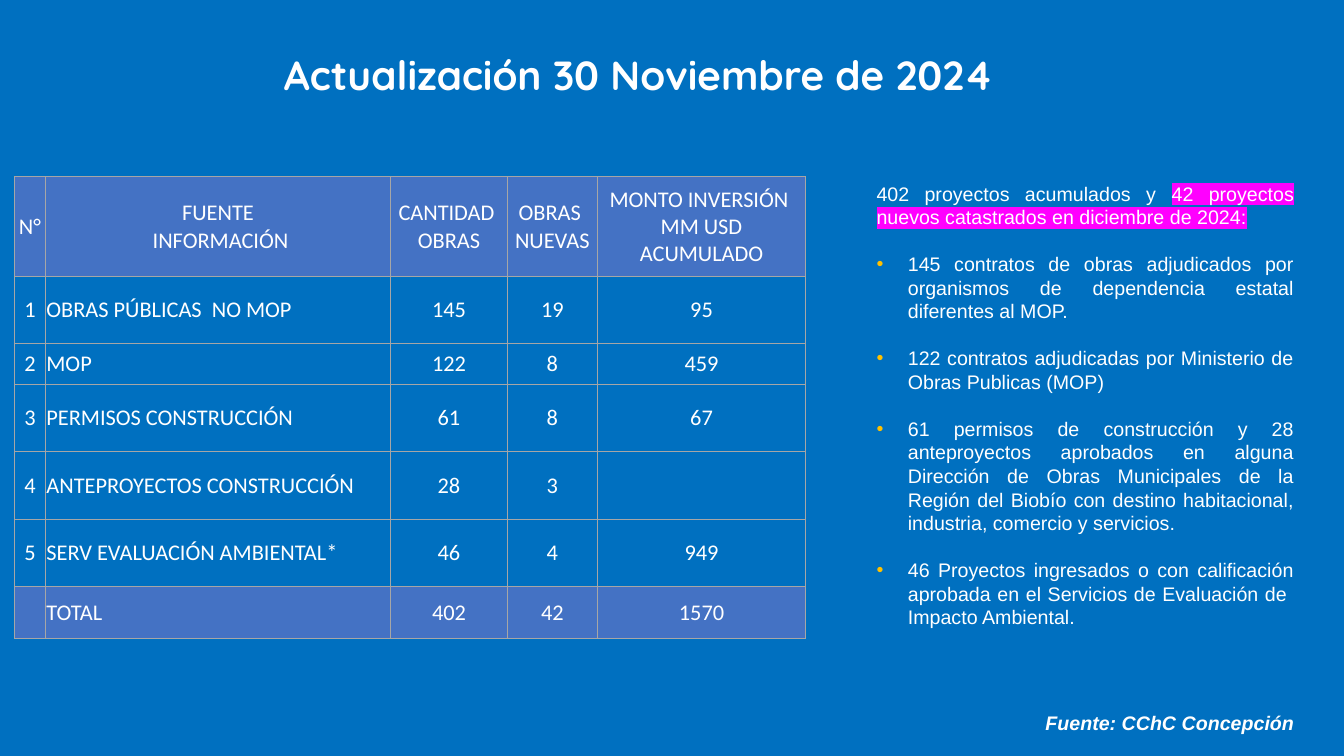
from pptx import Presentation
from pptx.dml.color import RGBColor
from pptx.enum.text import MSO_ANCHOR, PP_ALIGN
from pptx.oxml.xmlchemy import OxmlElement
from pptx.util import Cm, Pt

BLUE = RGBColor(0x00, 0x70, 0xC0)
INDIGO = RGBColor(0x44, 0x72, 0xC4)
WHITE = RGBColor(0xFF, 0xFF, 0xFF)
PINK = RGBColor(0xFF, 0x00, 0xFF)
AMBER = RGBColor(0xFF, 0xC0, 0x00)
GREY = RGBColor(0xA6, 0xA6, 0xA6)

COLS = [0.79, 8.69, 2.95, 2.26, 5.26]
HEIGHTS = [2.51, 1.7, 1.02, 1.7, 1.7, 1.7, 1.32]
ROWS = [
    ("N°", "FUENTE\n INFORMACIÓN", "CANTIDAD \nOBRAS", "OBRAS \nNUEVAS",
     "MONTO INVERSIÓN \nMM USD\nACUMULADO"),
    ("1", "OBRAS PÚBLICAS  NO MOP", "145", "19", "95"),
    ("2", "MOP", "122", "8", "459"),
    ("3", "PERMISOS CONSTRUCCIÓN", "61", "8", "67"),
    ("4", "ANTEPROYECTOS CONSTRUCCIÓN", "28", "3", ""),
    ("5", "SERV EVALUACIÓN AMBIENTAL*", "46", "4", "949"),
    ("", "TOTAL", "402", "42", "1570"),
]
POINTS = [
    "145 contratos de obras adjudicados por organismos de dependencia estatal "
    "diferentes al MOP.",
    "122 contratos adjudicadas por Ministerio de Obras Publicas (MOP)",
    "61 permisos de construcción y 28 anteproyectos aprobados en alguna "
    "Dirección de Obras Municipales de la Región del Biobío con destino "
    "habitacional, industria, comercio y servicios.",
    "46 Proyectos ingresados o con calificación aprobada en el Servicios de "
    "Evaluación de  Impacto Ambiental.",
]


def add_node(parent, tag, **attrs):
    node = OxmlElement(tag)
    for key, value in attrs.items():
        node.set(key, str(value))
    parent.append(node)
    return node


def add_run(para, text, size, face, bold=False, italic=False):
    run = para.add_run()
    run.text = text
    font = run.font
    font.size, font.name = Pt(size), face
    font.bold, font.italic = bold, italic
    font.color.rgb = WHITE
    return run


def mark(run, color):
    """Highlight a run; the element must follow the text fill."""
    props = run.font._element
    light = add_node(props, "a:highlight")
    add_node(light, "a:srgbClr", val=color)
    props.find(light.tag.replace("highlight", "solidFill")).addnext(light)


def add_bullet(para):
    props = para._p.get_or_add_pPr()
    props.set("marL", str(Cm(0.79)))
    props.set("indent", str(-Cm(0.79)))
    add_node(add_node(props, "a:buClr"), "a:srgbClr", val=AMBER)
    add_node(props, "a:buFont", typeface="Arial")
    add_node(props, "a:buChar", char="•")


def add_frame(slide, box):
    frame = slide.shapes.add_textbox(*map(Cm, box)).text_frame
    frame.word_wrap = True
    return frame


def add_title(slide, box):
    title = slide.shapes.title
    title.left, title.top, title.width, title.height = map(Cm, box)
    frame = title.text_frame
    frame.vertical_anchor = MSO_ANCHOR.MIDDLE
    para = frame.paragraphs[0]
    para.alignment = PP_ALIGN.CENTER
    add_run(para, "Actualización 30 Noviembre de 2024", 29, "Quicksand", bold=True)


def add_notes(slide, box):
    frame = add_frame(slide, box)
    intro = frame.paragraphs[0]
    intro.alignment = PP_ALIGN.JUSTIFY
    add_run(intro, "402 proyectos acumulados y ", 14, "Arial")
    fresh = "42 proyectos nuevos catastrados en diciembre de 2024:"
    mark(add_run(intro, fresh, 14, "Arial"), PINK)
    for point in POINTS:
        para = frame.add_paragraph()
        para.alignment = PP_ALIGN.JUSTIFY
        para.space_before = Pt(16.8)
        add_bullet(para)
        add_run(para, point, 14, "Arial")


def add_source(slide, box):
    para = add_frame(slide, box).paragraphs[0]
    para.alignment = PP_ALIGN.RIGHT
    add_run(para, "Fuente: CChC Concepción", 14, "Arial", bold=True, italic=True)


def fill_cell(cell, text, align, shaded):
    cell.margin_left = cell.margin_right = cell.margin_top = Cm(0.02)
    cell.margin_bottom = 0
    cell.vertical_anchor = MSO_ANCHOR.MIDDLE
    props = cell._tc.get_or_add_tcPr()
    for side in "LRTB":
        line = add_node(props, f"a:ln{side}", w=Pt(0.75))
        add_node(add_node(line, "a:solidFill"), "a:srgbClr", val=GREY)
    if shaded:
        cell.fill.solid()
        cell.fill.fore_color.rgb = INDIGO
    else:
        cell.fill.background()
    frame = cell.text_frame
    for i, part in enumerate(text.split("\n") if text else []):
        para = frame.add_paragraph() if i else frame.paragraphs[0]
        para.alignment = align
        add_run(para, part, 16, "Calibri")


def add_grid(slide, left, top):
    shape = slide.shapes.add_table(
        len(ROWS), len(COLS), Cm(left), Cm(top), Cm(sum(COLS)), Cm(sum(HEIGHTS)))
    table = shape.table
    table.first_row = table.horz_banding = False
    for col, width in zip(table.columns, COLS):
        col.width = Cm(width)
    for r, (row, height) in enumerate(zip(ROWS, HEIGHTS)):
        table.rows[r].height = Cm(height)
        for c, text in enumerate(row):
            align = PP_ALIGN.LEFT if c == 1 and r else PP_ALIGN.CENTER
            fill_cell(table.cell(r, c), text, align, r in (0, len(ROWS) - 1))


def main():
    deck = Presentation()
    deck.slide_width, deck.slide_height = Cm(33.87), Cm(19.05)
    slide = deck.slides.add_slide(deck.slide_layouts[5])
    slide.background.fill.solid()
    slide.background.fill.fore_color.rgb = BLUE
    add_title(slide, (6.12, 1.12, 19.96, 1.5))
    add_notes(slide, (21.84, 4.45, 11.02, 11.63))
    add_source(slide, (23.34, 17.8, 9.53, 0.86))
    add_grid(slide, 0.36, 4.45)
    deck.save("out.pptx")


if __name__ == "__main__":
    main()
